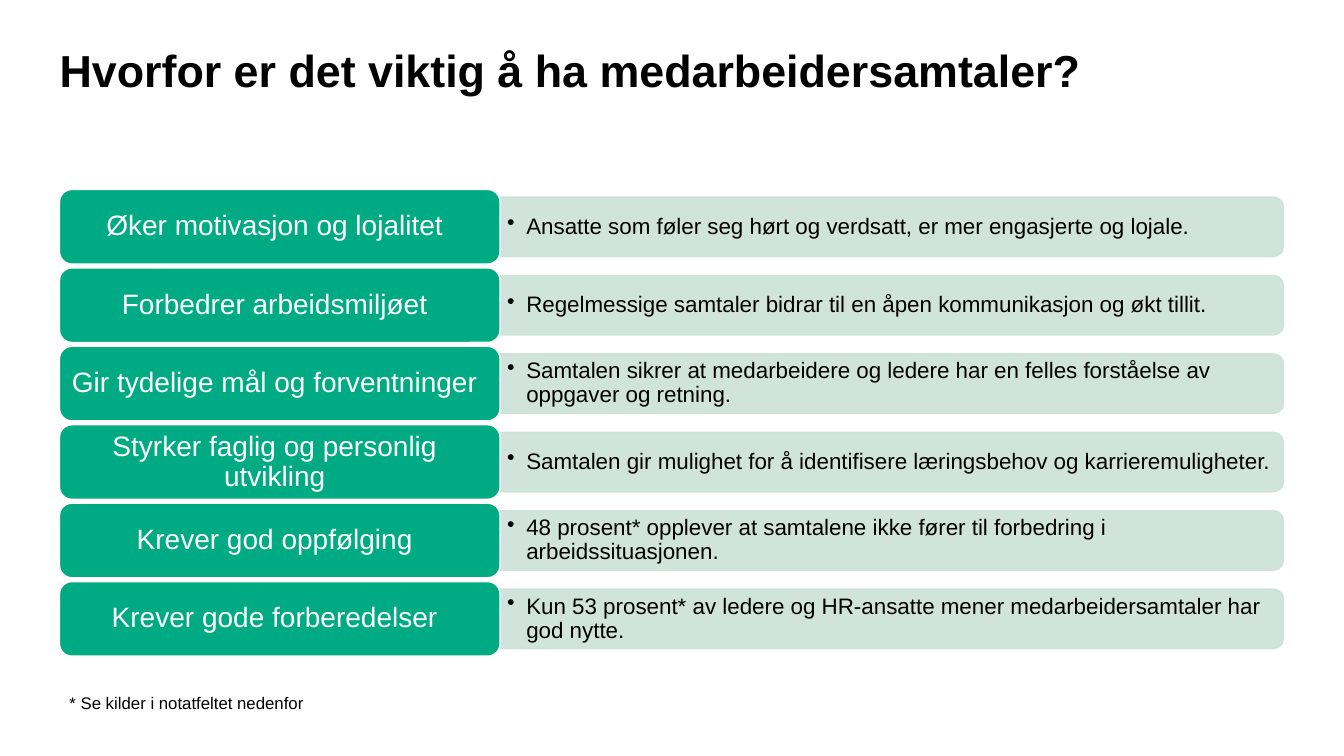
from lxml.etree import SubElement
from pptx import Presentation
from pptx.dml.color import RGBColor
from pptx.enum.shapes import MSO_SHAPE
from pptx.enum.text import MSO_ANCHOR, PP_ALIGN
from pptx.oxml.ns import qn
from pptx.util import Inches, Pt

GREEN = RGBColor(0x00, 0xAB, 0x84)
PALE_GREEN = RGBColor(0xCC, 0xE2, 0xD9)
WHITE = RGBColor(0xFF, 0xFF, 0xFF)
BLACK = RGBColor(0x00, 0x00, 0x00)

LEFT = 0.59
FIRST_TOP = 1.88
ROW_PITCH = 3.89 / 5
LABEL_WIDTH, LABEL_HEIGHT = 4.37, 0.74
BAR_LENGTH, BAR_HEIGHT = 7.77, 0.59
DETAIL_WIDTH, DETAIL_HEIGHT = 7.74, 0.53

REASONS = [
    ("Øker motivasjon og lojalitet",
     "Ansatte som føler seg hørt og verdsatt, er mer engasjerte og lojale."),
    ("Forbedrer arbeidsmiljøet",
     "Regelmessige samtaler bidrar til en åpen kommunikasjon og økt tillit."),
    ("Gir tydelige mål og forventninger",
     "Samtalen sikrer at medarbeidere og ledere har en felles forståelse av oppgaver og retning."),
    ("Styrker faglig og personlig utvikling",
     "Samtalen gir mulighet for å identifisere læringsbehov og karrieremuligheter."),
    ("Krever god oppfølging",
     "48 prosent* opplever at samtalene ikke fører til forbedring i arbeidssituasjonen."),
    ("Krever gode forberedelser",
     "Kun 53 prosent* av ledere og HR-ansatte mener medarbeidersamtaler har god nytte."),
]


def write(frame, text, size, color, insets, anchor=MSO_ANCHOR.MIDDLE,
          align=PP_ALIGN.LEFT, spacing=0.9, bold=False, bullet=False):
    frame.word_wrap = True
    frame.vertical_anchor = anchor
    (frame.margin_left, frame.margin_top,
     frame.margin_right, frame.margin_bottom) = map(Inches, insets)
    paragraph = frame.paragraphs[0]
    paragraph.text = text
    paragraph.alignment = align
    paragraph.line_spacing = spacing
    if bullet:
        properties = paragraph._p.get_or_add_pPr()
        properties.set("marL", str(Inches(0.19)))
        properties.set("indent", str(Inches(-0.19)))
        SubElement(properties, qn("a:buChar")).set("char", "•")
    paragraph.font.name = "Arial"
    paragraph.font.size = Pt(size)
    paragraph.font.bold = bold
    paragraph.font.color.rgb = color


def set_opacity(color_format_parent, percent):
    for color in color_format_parent.iter(qn("a:srgbClr")):
        SubElement(color, qn("a:alpha")).set("val", str(percent * 1000))


def add_panel(slide, preset, left, top, width, height, fill, outline):
    panel = slide.shapes.add_shape(
        preset, Inches(left), Inches(top), Inches(width), Inches(height))
    panel.shadow.inherit = False
    panel.fill.solid()
    panel.fill.fore_color.rgb = fill
    panel.line.color.rgb = outline
    panel.line.width = Pt(1)
    return panel


def add_text(slide, left, top, width, height, *content, **style):
    box = slide.shapes.add_textbox(
        Inches(left), Inches(top), Inches(width), Inches(height))
    write(box.text_frame, *content, **style)


def add_reason(slide, top, heading, detail):
    middle = top + LABEL_HEIGHT / 2
    detail_left = LEFT + LABEL_WIDTH

    # Pale bar, turned so that its rounded end points right
    bar = add_panel(slide, MSO_SHAPE.ROUND_2_SAME_RECTANGLE,
                    detail_left + (BAR_LENGTH - BAR_HEIGHT) / 2,
                    middle - BAR_LENGTH / 2,
                    BAR_HEIGHT, BAR_LENGTH, PALE_GREEN, PALE_GREEN)
    bar.rotation = 90
    set_opacity(bar._element.spPr, 90)
    add_text(slide, detail_left, middle - DETAIL_HEIGHT / 2,
             DETAIL_WIDTH, DETAIL_HEIGHT, detail, 16, BLACK,
             (0.07, 0.03, 0.07, 0.03), bullet=True)

    # Green label
    label = add_panel(slide, MSO_SHAPE.ROUNDED_RECTANGLE, LEFT, top,
                      LABEL_WIDTH, LABEL_HEIGHT, GREEN, WHITE)
    write(label.text_frame, heading, 20, WHITE, (0.08, 0.04, 0.18, 0.04),
          align=PP_ALIGN.CENTER)


def main():
    presentation = Presentation()
    presentation.slide_width = Inches(13.33)
    presentation.slide_height = Inches(7.5)
    slide = presentation.slides.add_slide(presentation.slide_layouts[5])

    # Title
    title = slide.shapes.title
    title.left, title.top = Inches(LEFT), Inches(0.48)
    title.width, title.height = Inches(12.14), Inches(0.77)
    write(title.text_frame, "Hvorfor er det viktig å ha medarbeidersamtaler?",
          32, BLACK, (0, 0, 0, 0), anchor=MSO_ANCHOR.TOP, bold=True)

    # Reasons
    for row, (heading, detail) in enumerate(REASONS):
        add_reason(slide, FIRST_TOP + row * ROW_PITCH, heading, detail)

    # Footnote
    add_text(slide, LEFT, 6.82, 9.28, 0.3,
             "* Se kilder i notatfeltet nedenfor", 12, BLACK,
             (0.1, 0.05, 0.1, 0.05), anchor=MSO_ANCHOR.TOP, spacing=1.0)

    presentation.save("out.pptx")


if __name__ == "__main__":
    main()
